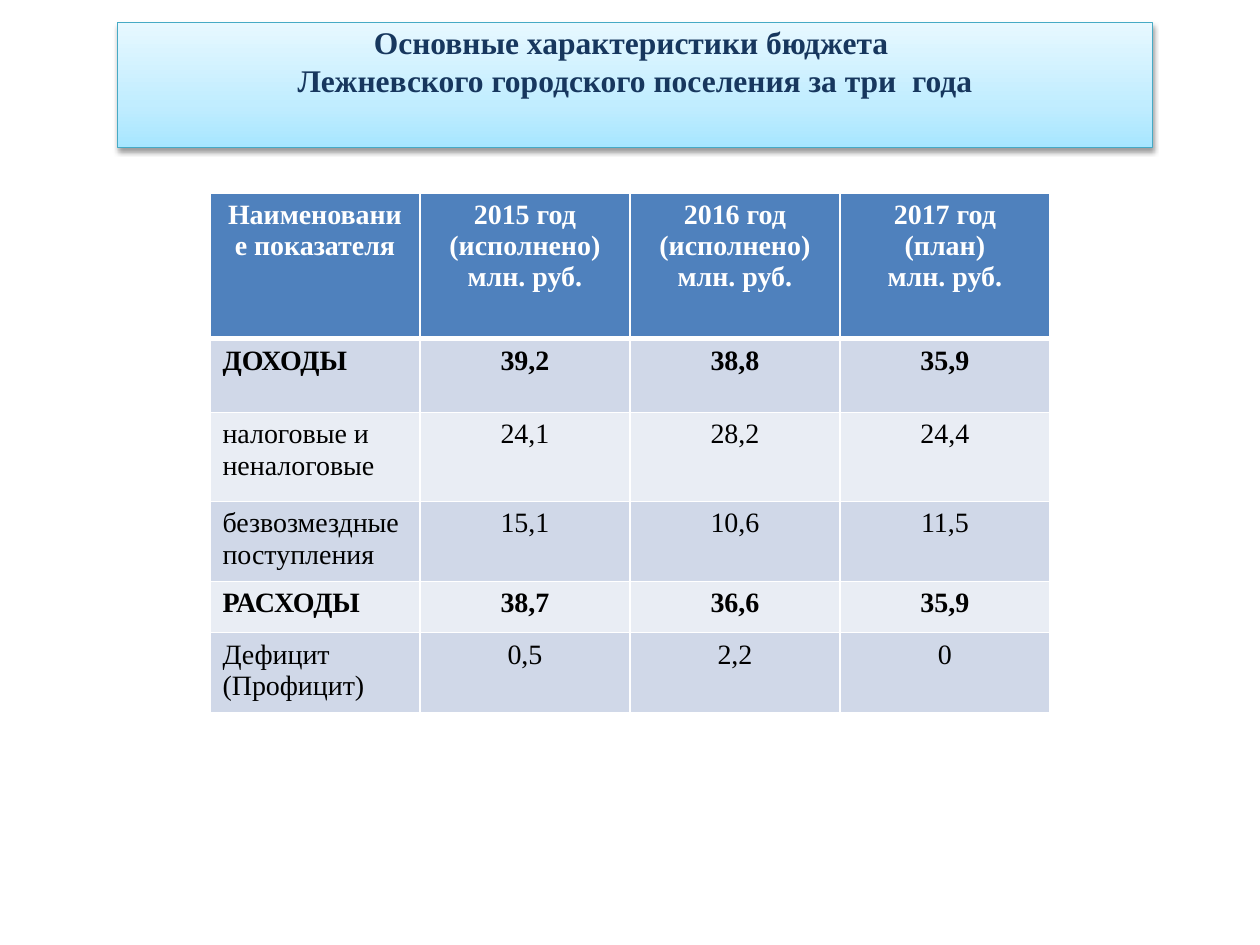
from typing import NamedTuple

from pptx import Presentation
from pptx.dml.color import RGBColor
from pptx.enum.shapes import MSO_SHAPE
from pptx.enum.text import MSO_ANCHOR, PP_ALIGN
from pptx.oxml import parse_xml
from pptx.oxml.ns import nsdecls
from pptx.util import Pt

FONT = "Times New Roman"
WHITE = RGBColor(0xFF, 0xFF, 0xFF)
BLACK = RGBColor(0x00, 0x00, 0x00)
NAVY = RGBColor(0x17, 0x37, 0x5E)
TEAL = RGBColor(0x46, 0xAA, 0xC5)
HEADER_BLUE = RGBColor(0x4F, 0x81, 0xBD)
BAND_DARK = RGBColor(0xD0, 0xD8, 0xE8)
BAND_LIGHT = RGBColor(0xE9, 0xED, 0xF4)
TITLE_STOPS = (
    (0, RGBColor(0xA7, 0xE6, 0xFF)),
    (35, RGBColor(0xC1, 0xED, 0xFF)),
    (100, RGBColor(0xE7, 0xF8, 0xFF)),
)
TITLE = "Основные характеристики бюджета \nЛежневского городского поселения за три  года"
COLUMN_WIDTH = 120


class BudgetRow(NamedTuple):
    height: float
    texts: tuple[str, ...]
    bold: bool = False


BUDGET_ROWS = (
    BudgetRow(83.4, (
        "Наименование показателя",
        "2015 год\n(исполнено)\nмлн. руб.",
        "2016 год\n(исполнено)\nмлн. руб.",
        "2017 год\n(план)\nмлн. руб.",
    ), True),
    BudgetRow(42.2, ("ДОХОДЫ", "39,2", "38,8", "35,9"), True),
    BudgetRow(50.9, ("налоговые и неналоговые", "24,1", "28,2", "24,4")),
    BudgetRow(45.7, ("безвозмездные поступления", "15,1", "10,6", "11,5")),
    BudgetRow(29.2, ("РАСХОДЫ", "38,7", "36,6", "35,9"), True),
    BudgetRow(45.7, ("Дефицит\n(Профицит)", "0,5", "2,2", "0")),
)


def write_text(frame, text: str, *, size: float, color: RGBColor,
               bold: bool = False, align=PP_ALIGN.CENTER) -> None:
    """Write one formatted paragraph for each line of text."""
    for index, line in enumerate(text.split("\n")):
        paragraph = frame.paragraphs[0] if index == 0 else frame.add_paragraph()
        paragraph.alignment = align
        run = paragraph.add_run()
        run.text = line
        run.font.name = FONT
        run.font.size = Pt(size)
        run.font.bold = bold
        run.font.color.rgb = color


def add_title(slide) -> None:
    """Draw the shaded title banner."""
    shape = slide.shapes.add_shape(
        MSO_SHAPE.RECTANGLE, Pt(67), Pt(13), Pt(591.8), Pt(71.3))
    shape.line.color.rgb = TEAL
    shape.line.width = Pt(0.75)
    shape.shadow.inherit = False
    stops = "".join(
        f'<a:gs pos="{position * 1000}"><a:srgbClr val="{color}"/></a:gs>'
        for position, color in TITLE_STOPS)
    properties = shape.element.spPr
    properties.insert(2, parse_xml(
        f'<a:gradFill {nsdecls("a")} rotWithShape="1"><a:gsLst>{stops}</a:gsLst>'
        '<a:lin ang="16200000" scaled="0"/></a:gradFill>'))
    properties[-1].append(parse_xml(
        f'<a:outerShdw {nsdecls("a")} blurRad="{Pt(3.1)}" dist="{Pt(1.6)}" '
        'dir="5400000" rotWithShape="0"><a:srgbClr val="000000">'
        '<a:alpha val="38000"/></a:srgbClr></a:outerShdw>'))
    frame = shape.text_frame
    frame.word_wrap = False
    frame.vertical_anchor = MSO_ANCHOR.TOP
    frame.margin_left = frame.margin_right = Pt(0)
    frame.margin_top = frame.margin_bottom = Pt(0)
    write_text(frame, TITLE, size=18, color=NAVY, bold=True)


def set_borders(cell, *, top: float, bottom: float) -> None:
    """Give a cell white borders of the given widths."""
    properties = cell._tc.get_or_add_tcPr()
    for side, width in (("L", 1), ("R", 1), ("T", top), ("B", bottom)):
        properties.append(parse_xml(
            f'<a:ln{side} {nsdecls("a")} w="{Pt(width)}"><a:solidFill>'
            f'<a:srgbClr val="{WHITE}"/></a:solidFill></a:ln{side}>'))


def add_budget_table(slide) -> None:
    """Draw the budget table with a header and banded rows."""
    columns = len(BUDGET_ROWS[0].texts)
    table = slide.shapes.add_table(
        len(BUDGET_ROWS), columns, Pt(120), Pt(110.2),
        Pt(columns * COLUMN_WIDTH), Pt(sum(row.height for row in BUDGET_ROWS))).table
    for column in table.columns:
        column.width = Pt(COLUMN_WIDTH)
    for row_index, row in enumerate(BUDGET_ROWS):
        table.rows[row_index].height = Pt(row.height)
        header = row_index == 0
        band = BAND_DARK if row_index % 2 else BAND_LIGHT
        for column_index, text in enumerate(row.texts):
            cell = table.cell(row_index, column_index)
            set_borders(cell, top=3 if row_index == 1 else 1, bottom=3 if header else 1)
            cell.fill.solid()
            cell.fill.fore_color.rgb = HEADER_BLUE if header else band
            label = column_index == 0 and not header
            write_text(cell.text_frame, text, size=16, bold=row.bold,
                       color=WHITE if header else BLACK,
                       align=PP_ALIGN.LEFT if label else PP_ALIGN.CENTER)


def main() -> None:
    """Build and save the budget slide."""
    presentation = Presentation()
    presentation.slide_width = Pt(720)
    presentation.slide_height = Pt(540)
    slide = presentation.slides.add_slide(presentation.slide_layouts[6])
    add_title(slide)
    add_budget_table(slide)
    presentation.save("out.pptx")


if __name__ == "__main__":
    main()
